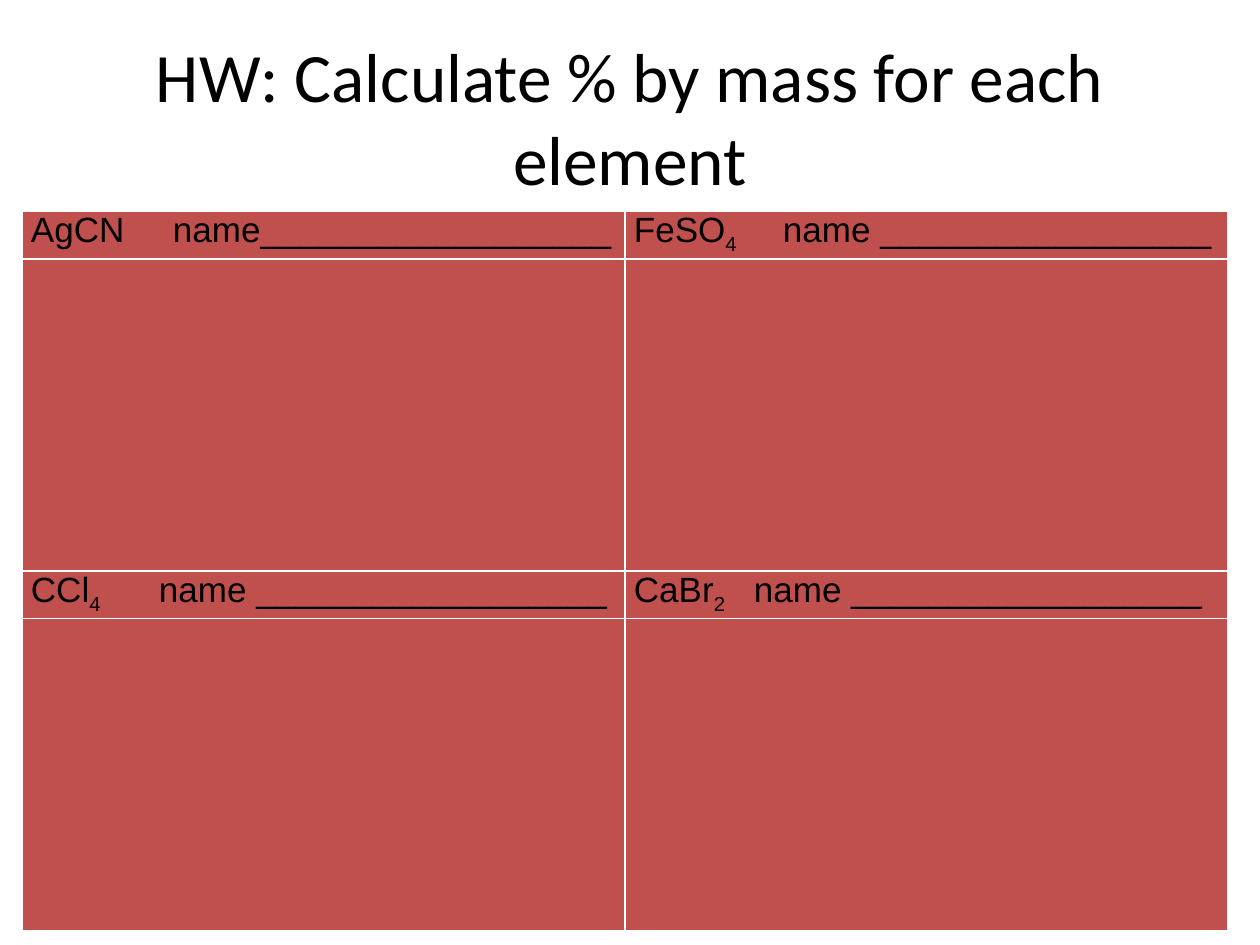
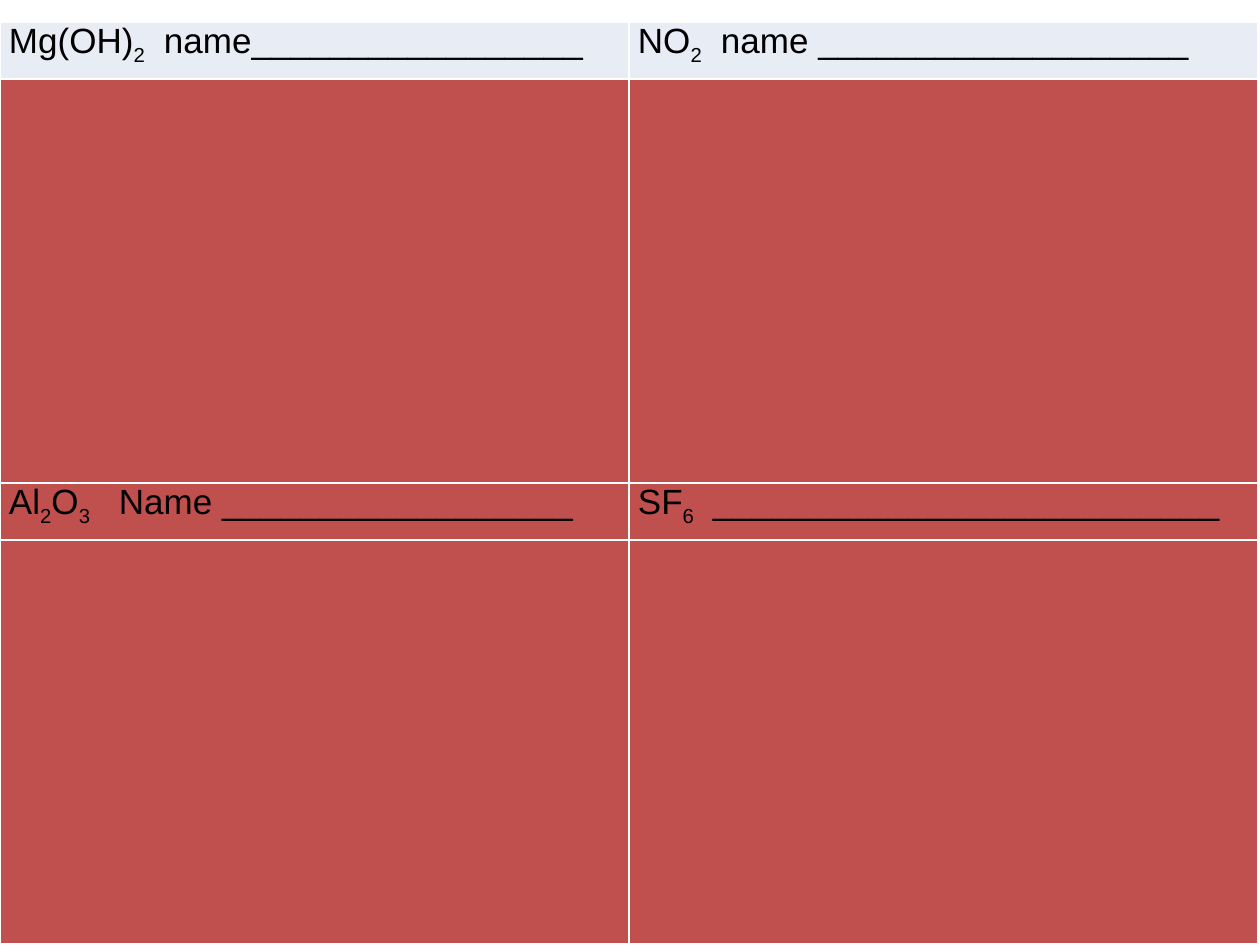
import itertools

import pptx
import pptx.dml.color
import pptx.enum.text
import pptx.oxml
import pptx.oxml.ns
import pptx.util

PX = 914400 / 126
COLOURS = {"ink": "000000", "red": "C0504D", "pale": "E8ECF4", "rule": "FFFFFF"}
DRAWING_NS = pptx.oxml.ns.nsdecls("a")
BORDER = (
    '<a:{side} {ns} w="12700"><a:solidFill><a:srgbClr val="{colour}"/></a:solidFill></a:{side}>'
)
TABS = '<a:tabLst {ns}><a:tab pos="{stop}" algn="l"/></a:tabLst>'


def px(length):
    return pptx.util.Emu(round(length * PX))


def rgb(name):
    return pptx.dml.color.RGBColor.from_string(COLOURS[name])


def style_font(para, face, size):
    para.font.name = face
    para.font.size = pptx.util.Pt(size)
    para.font.color.rgb = rgb("ink")


def add_title(page, text, left, top, width, height):
    box = page.shapes.add_textbox(px(left), px(top), px(width), px(height))
    frame = box.text_frame
    frame.word_wrap = True
    frame.vertical_anchor = pptx.enum.text.MSO_ANCHOR.MIDDLE
    para = frame.paragraphs[0]
    para.text = text
    para.alignment = pptx.enum.text.PP_ALIGN.CENTER
    style_font(para, "Calibri", 39.6)


def style_cell(cell, fill):
    cell.margin_left = cell.margin_right = px(9)
    cell.margin_top = cell.margin_bottom = 0
    cell.fill.solid()
    cell.fill.fore_color.rgb = rgb(fill)
    properties = cell._tc.get_or_add_tcPr()
    for index, side in enumerate(("lnL", "lnR", "lnT", "lnB")):
        border = BORDER.format(side=side, ns=DRAWING_NS, colour=COLOURS["rule"])
        properties.insert(index, pptx.oxml.parse_xml(border))


def write_prompt(cell, formula, blank, stop):
    """Write a formula with its digits lowered, then the blank at a tab stop."""
    para = cell.text_frame.paragraphs[0]
    style_font(para, "Arial", 20)
    tabs = TABS.format(ns=DRAWING_NS, stop=px(stop))
    para._p.get_or_add_pPr().insert(0, pptx.oxml.parse_xml(tabs))
    for lowered, letters in itertools.groupby(formula, str.isdigit):
        span = para.add_run()
        span.text = "".join(letters)
        if lowered:
            span._r.get_or_add_rPr().set("baseline", "-25000")
    para.add_run().text = "\t" + blank


def add_worksheet(page, prompts, left, top, column, prompt_row, work_row, first_fill="red"):
    """Add a two-column table with a work row below each row of prompts."""
    heights = [prompt_row, work_row] * len(prompts)
    frame = page.shapes.add_table(
        len(heights), 2, px(left), px(top), px(2 * column), px(sum(heights))
    )
    table = frame.table
    table.first_row = table.horz_banding = False
    for table_column in table.columns:
        table_column.width = px(column)
    for index, (row, height) in enumerate(zip(table.rows, heights)):
        row.height = px(height)
        for cell in row.cells:
            style_cell(cell, first_fill if index == 0 else "red")
    for index, pair in enumerate(prompts):
        for cell, prompt in zip(table.rows[2 * index].cells, pair):
            write_prompt(cell, *prompt)


def build_first_page(page):
    add_title(page, "HW: Calculate % by mass for each element", 63, 38, 1134, 157)
    prompts = [
        [("AgCN", "name" + "_" * 18, 142), ("FeSO4", "name " + "_" * 17, 149)],
        [("CCl4", "name " + "_" * 18, 128), ("CaBr2", "name " + "_" * 18, 120)],
    ]
    add_worksheet(page, prompts, 22, 211, 603, 44, 312)


def build_second_page(page):
    prompts = [
        [("Mg(OH)2", "name" + "_" * 17, 155), ("NO2", "name " + "_" * 19, 83)],
        [("Al2O3", "Name " + "_" * 18, 110), ("SF6", "_" * 26, 75)],
    ]
    add_worksheet(page, prompts, 0, 22, 629, 57, 404, first_fill="pale")


def main():
    deck = pptx.Presentation()
    deck.slide_width, deck.slide_height = px(1260), px(945)
    for build in (build_first_page, build_second_page):
        build(deck.slides.add_slide(deck.slide_layouts[6]))
    deck.save("out.pptx")


if __name__ == "__main__":
    main()
